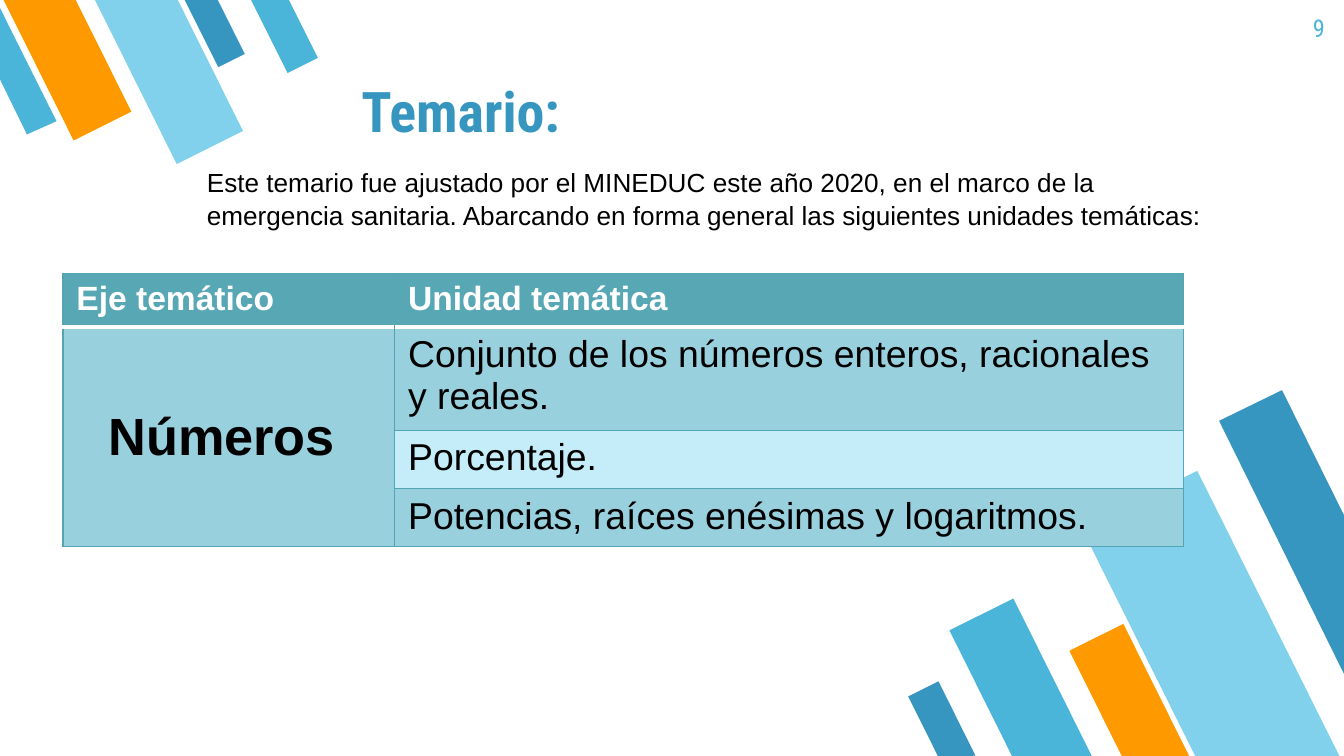
from pptx import Presentation
from pptx.util import Cm, Pt
from pptx.dml.color import RGBColor
from pptx.enum.shapes import MSO_SHAPE as Geo
from pptx.enum.text import PP_ALIGN as Align, MSO_ANCHOR as Anchor
from lxml import etree

NS = "http://schemas.openxmlformats.org/drawingml/2006/main"
NAVY, BLUE, SKY, GOLD = "3796BF", "4BB5D9", "81D1EC", "FF9900"
TEAL, MID, PALE, EDGE = "57A7B5", "98D0DD", "C4EDF9", "53A5B3"


def paint(part, tone):
    """Give a fill or a font a solid colour."""
    if hasattr(part, "solid"):
        part.solid()
        part.fore_color.rgb = RGBColor.from_string(tone)
    else:
        part.color.rgb = RGBColor.from_string(tone)


def write(frame, text, tone, align=Align.LEFT, **style):
    """Put one styled paragraph into a text frame."""
    frame.word_wrap = True
    par = frame.paragraphs[0]
    par.alignment = align
    run = par.add_run()
    run.text = text
    for key, val in style.items():
        setattr(run.font, key, val)
    paint(run.font, tone)
    return par


deck = Presentation()
deck.slide_width, deck.slide_height = Cm(25.4), Cm(14.28)
slide = deck.slides.add_slide(deck.slide_layouts[6])
shapes = slide.shapes

# Slanted bars: turn, then left, top, width, height, colour
bars = {
    153.5: [(18.62, 11.43, 1.35, 3.35, BLUE), (21.67, 9.12, 2.44, 6.07, SKY),
            (20.78, 11.89, 1.14, 2.82, GOLD), (17.48, 12.93, 0.64, 1.57, NAVY)],
    333.5: [(3.78, -0.2, 0.56, 1.42, NAVY), (0.66, -0.46, 1.22, 3, GOLD),
            (2.49, -0.51, 1.4, 3.48, SKY), (5.05, -0.25, 0.64, 1.57, BLUE)],
}
decor = []
for turn, group in bars.items():
    for *box, tone in group:
        bar = shapes.add_shape(Geo.FLOWCHART_MANUAL_INPUT, *map(Cm, box))
        bar.rotation = turn
        bar._element.spPr.xfrm.set("flipH", "1")
        decor.append((bar, tone))

# Bars cut off by the slide's sides
cuts = [
    ([(24.23, 7.37), (23.04, 7.95), (25.4, 12.73), (25.4, 9.73)], NAVY),
    ([(0.51, 2.54), (1.07, 2.29), (0, 0.15), (0, 1.5)], BLUE),
]
for points, tone in cuts:
    first, *rest = [(Cm(x), Cm(y)) for x, y in points]
    pen = shapes.build_freeform(*first)
    pen.add_line_segments(rest, close=True)
    decor.append((pen.convert_to_shape(), tone))

for bar, tone in decor:
    bar.shadow.inherit = False
    bar.line.fill.background()
    paint(bar.fill, tone)

# Title, page number and introduction
roboto = "Roboto Condensed"
intro = ("Este temario fue ajustado por el MINEDUC este año 2020, en el marco de la "
         "emergencia sanitaria. Abarcando en forma general las siguientes unidades temáticas:")
texts = [
    ((6.58, 1.09, 16, 1.88), 0.25, Anchor.BOTTOM, "Temario:", NAVY, Align.LEFT,
     dict(size=Pt(30), name=roboto, bold=True)),
    ((23.77, 0, 1.52, 1.09), 0.25, Anchor.TOP, "9", BLUE, Align.RIGHT,
     dict(size=Pt(13), name=roboto)),
    ((3.66, 2.97, 19.35, 1.45), 0.13, Anchor.TOP, intro, "000000", Align.LEFT,
     dict(size=Pt(14), name="Arial")),
]
for box, pad, anchor, text, tone, align, style in texts:
    frame = shapes.add_textbox(*map(Cm, box)).text_frame
    frame.vertical_anchor = anchor
    frame.margin_top = frame.margin_bottom = Cm(pad)
    par = write(frame, text, tone, align, **style)
par.line_spacing = 1.07

# Table of topics
wide, high = [6.27, 14.91], [0.98, 1.82, 1.04, 1.04]
grid = shapes.add_table(4, 2, Cm(1.19), Cm(5.16), Cm(sum(wide)), Cm(sum(high))).table
for col, size in zip(grid.columns, wide):
    col.width = Cm(size)
for row, size in zip(grid.rows, high):
    row.height = Cm(size)
grid.cell(1, 0).merge(grid.cell(3, 0))

head = dict(size=Pt(18), bold=True)
topic = dict(size=Pt(20), bold=False)
cells = [
    (0, 0, "Eje temático", "FFFFFF", TEAL, head),
    (0, 1, "Unidad temática", "FFFFFF", TEAL, head),
    (1, 0, "Números", "000000", MID, dict(size=Pt(28), bold=True)),
    (1, 1, "Conjunto de los números enteros, racionales y reales.", "000000", MID, topic),
    (2, 1, "Porcentaje.", "000000", PALE, topic),
    (3, 1, "Potencias, raíces enésimas y logaritmos.", "000000", MID, topic),
]
for r, c, text, tone, back, style in cells:
    write(grid.cell(r, c).text_frame, text, tone, name="Arial", **style)
    paint(grid.cell(r, c).fill, back)

axis = grid.cell(1, 0)
axis.vertical_anchor = Anchor.MIDDLE
axis.margin_right = Cm(0.53)
axis.text_frame.paragraphs[0].alignment = Align.CENTER

# Cell borders, with a white rule under the header
for r in range(4):
    for c in range(2):
        props = grid.cell(r, c)._tc.get_or_add_tcPr()
        for spot, side in enumerate("LRTB"):
            rule = (r, side) in [(0, "B"), (1, "T")]
            tone, thick = ("FFFFFF", 2) if rule else (EDGE, 0.75)
            if r == 0 and (c, side) in [(0, "R"), (1, "L")]:
                tone = TEAL
            line = etree.Element(f"{{{NS}}}ln{side}", w=str(Pt(thick)))
            fill = etree.SubElement(line, f"{{{NS}}}solidFill")
            etree.SubElement(fill, f"{{{NS}}}srgbClr", val=tone)
            props.insert(spot, line)

deck.save("out.pptx")
